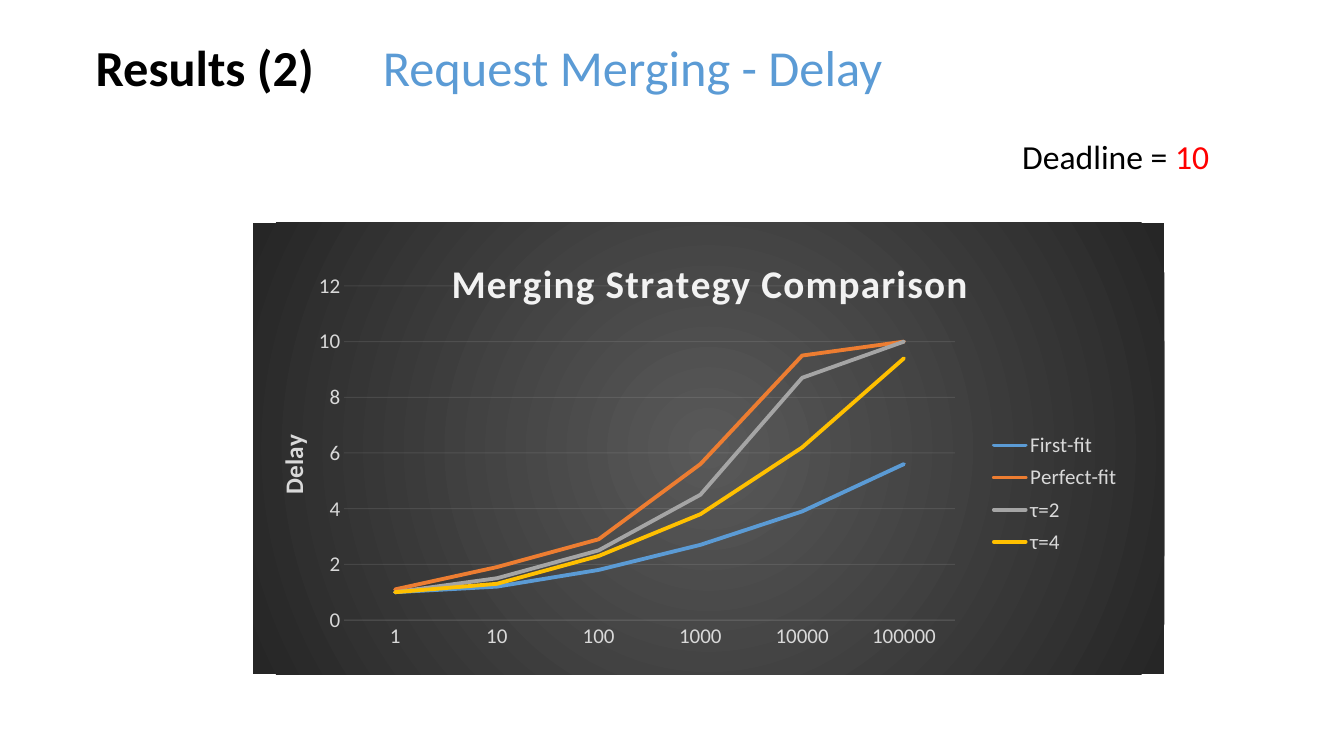
import pptx
import pptx.util
import pptx.dml.color
import pptx.chart.data
import pptx.enum.chart
import pptx.oxml
import pptx.oxml.ns

Inches = pptx.util.Inches
Pt = pptx.util.Pt
RGBColor = pptx.dml.color.RGBColor
qn = pptx.oxml.ns.qn

WIDTH, HEIGHT = 13.33, 7.5
FONT = "Calibri"
BLACK = RGBColor(0, 0, 0)
RED = RGBColor(255, 0, 0)
BLUE = RGBColor(0x5B, 0x9B, 0xD5)
ORANGE = RGBColor(0xED, 0x7D, 0x31)
GRAY = RGBColor(0xA5, 0xA5, 0xA5)
GOLD = RGBColor(0xFF, 0xC0, 0)
PALE = RGBColor(0xF2, 0xF2, 0xF2)
SILVER = RGBColor(0xD9, 0xD9, 0xD9)
CHARCOAL = RGBColor(0x59, 0x59, 0x59)
COAL = RGBColor(0x26, 0x26, 0x26)

CATEGORIES = ["1", "10", "100", "1000", "10000", "100000"]
STRATEGIES = [
    ("First-fit", BLUE, [1, 1.2, 1.8, 2.7, 3.9, 5.6]),
    ("Perfect-fit", ORANGE, [1.1, 1.9, 2.9, 5.6, 9.5, 10]),
    ("τ=2", GRAY, [1, 1.5, 2.5, 4.5, 8.7, 10]),
    ("τ=4", GOLD, [1, 1.3, 2.3, 3.8, 6.2, 9.4]),
]


def chart_xml(body):
    return pptx.oxml.parse_xml(body.replace(
        " NS", " " + pptx.oxml.ns.nsdecls("a", "c"), 1))


def format_font(font, size, color, bold=False):
    font.name = FONT
    font.size = Pt(size)
    font.bold = bold
    font.color.rgb = color


def add_span(para, text, size, color, bold=False):
    span = para.add_run()
    span.text = text
    format_font(span.font, size, color, bold)
    return span


def add_line_of_text(page, box, spans, tab=None):
    frame = page.shapes.add_textbox(*map(Inches, box)).text_frame
    frame.word_wrap = True
    para = frame.paragraphs[0]
    if tab:
        para._p.get_or_add_pPr().append(chart_xml(
            f'<a:tabLst NS><a:tab pos="{Inches(tab)}" algn="l"/></a:tabLst>'))
    for text, options in spans:
        add_span(para, text, **options)


def place(element, x, y, width=None, height=None, inner=False):
    for layout in element.findall(qn("c:layout")):
        element.remove(layout)
    target = '<c:layoutTarget val="inner"/>' if inner else ""
    modes = '<c:xMode val="edge"/><c:yMode val="edge"/>'
    shares = zip("xywh", (x, y, width, height))
    values = "".join(f'<c:{name} val="{share}"/>'
                     for name, share in shares if share is not None)
    layout = chart_xml(f"<c:layout NS><c:manualLayout>{target}{modes}{values}"
                       "</c:manualLayout></c:layout>")
    overlay = element.find(qn("c:overlay"))
    if overlay is None:
        element.insert(0, layout)
    else:
        overlay.addprevious(layout)


def format_faint_line(line):
    line.color.rgb = PALE
    line.width = Pt(0.75)
    color = line._get_or_add_ln().find(".//" + qn("a:srgbClr"))
    color.append(chart_xml('<a:alpha NS val="10000"/>'))


def fill_background(chart):
    stops = "".join(f'<a:gs pos="{position}"><a:srgbClr val="{color}"/></a:gs>'
                    for position, color in ((0, CHARCOAL), (100000, COAL)))
    chart._chartSpace.find(qn("c:chart")).addnext(chart_xml(
        f"<c:spPr NS><a:gradFill><a:gsLst>{stops}</a:gsLst>"
        '<a:path path="circle"><a:fillToRect l="50000" t="50000" r="50000" b="50000"/>'
        "</a:path></a:gradFill><a:ln><a:noFill/></a:ln></c:spPr>"))


def format_axes(chart):
    for axis in (chart.category_axis, chart.value_axis):
        axis.major_tick_mark = pptx.enum.chart.XL_TICK_MARK.NONE
        axis.minor_tick_mark = pptx.enum.chart.XL_TICK_MARK.NONE
        format_font(axis.tick_labels.font, 15, SILVER)
    format_faint_line(chart.category_axis.format.line)
    values = chart.value_axis
    values.minimum_scale, values.maximum_scale, values.major_unit = 0, 12, 2
    values.format.line.fill.background()
    format_faint_line(values.major_gridlines.format.line)
    frame = values.axis_title.text_frame
    add_span(frame.paragraphs[0], "Delay", 18, SILVER, bold=True)
    body = frame._txBody.find(qn("a:bodyPr"))
    body.set("rot", "-5400000")
    body.set("vert", "horz")
    place(values.axis_title._element, 0.02, 0.46)


def add_delay_chart(page, box):
    data = pptx.chart.data.CategoryChartData()
    data.categories = CATEGORIES
    for name, color, delays in STRATEGIES:
        data.add_series(name, delays)
    chart = page.shapes.add_chart(
        pptx.enum.chart.XL_CHART_TYPE.LINE, *map(Inches, box), data).chart
    format_font(chart.font, 10, BLACK)
    fill_background(chart)
    chart.plots[0].vary_by_categories = False
    for series, (name, color, delays) in zip(chart.plots[0].series, STRATEGIES):
        series.smooth = False
        series.marker.style = pptx.enum.chart.XL_MARKER_STYLE.NONE
        series.format.line.color.rgb = color
        series.format.line.width = Pt(2.75)
        series.format.line._get_or_add_ln().set("cap", "rnd")
    chart.has_title = True
    heading = add_span(chart.chart_title.text_frame.paragraphs[0],
                       "Merging Strategy Comparison", 28, PALE, bold=True)
    heading._r.get_or_add_rPr().set("spc", "100")
    place(chart.chart_title._element, 0.21, 0.06)
    format_axes(chart)
    chart.has_legend = True
    chart.legend.position = pptx.enum.chart.XL_LEGEND_POSITION.RIGHT
    chart.legend.include_in_layout = False
    format_font(chart.legend.font, 15, SILVER)
    place(chart.legend._element, 0.8, 0.45, 0.16, 0.3)
    place(chart._chartSpace.find(".//" + qn("c:plotArea")),
          0.1, 0.14, 0.67, 0.74, inner=True)


def main():
    deck = pptx.Presentation()
    deck.slide_width, deck.slide_height = Inches(WIDTH), Inches(HEIGHT)
    page = deck.slides.add_slide(deck.slide_layouts[6])
    add_line_of_text(page, (0.85, 0.31, 9.36, 0.71), [
        ("Results (2)\t", dict(size=36, color=BLACK, bold=True)),
        ("Request Merging - Delay", dict(size=36, color=BLUE)),
    ], tab=2.85)
    add_line_of_text(page, (10.04, 1.3, 2.79, 0.5), [
        ("Deadline = ", dict(size=24, color=BLACK)),
        ("10", dict(size=24, color=RED)),
    ])
    add_delay_chart(page, (2.51, 2.21, 9.04, 4.48))
    deck.save("out.pptx")


if __name__ == "__main__":
    main()
